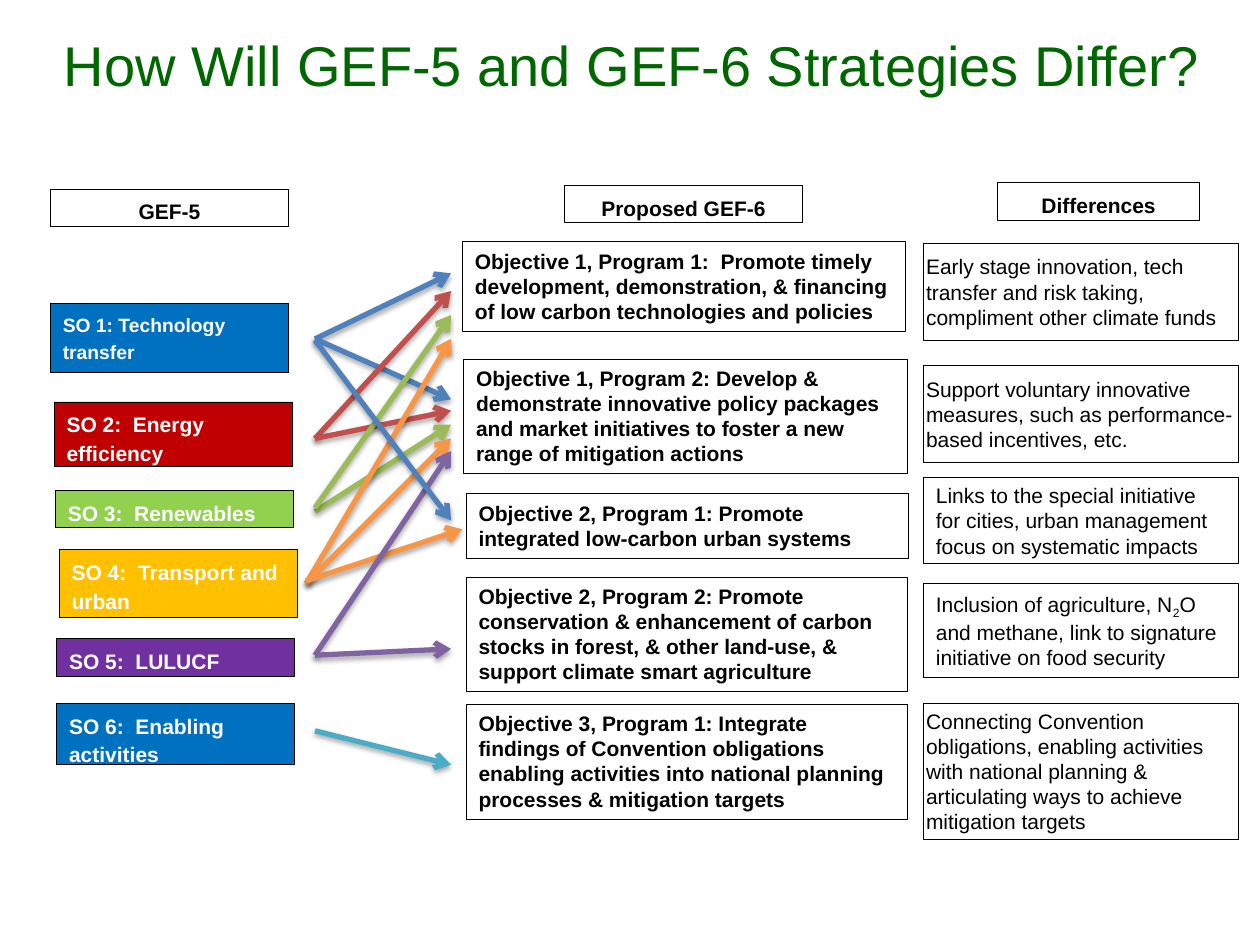
from lxml.etree import SubElement as Sub
from pptx import Presentation
from pptx.dml.color import RGBColor as RGB
from pptx.enum.shapes import MSO_CONNECTOR as Conn, MSO_SHAPE as Kind
from pptx.enum.text import MSO_ANCHOR as Anchor, MSO_AUTO_SIZE as Auto, PP_ALIGN as Align
from pptx.oxml.ns import qn
from pptx.util import Inches, Pt


def tint(code):
    return RGB.from_string(code)


def box(x, y, w, h, runs, fill="FFFFFF", ink="000000", size=12, bold=True):
    shape = slide.shapes.add_shape(Kind.RECTANGLE, Inches(x), Inches(y), Inches(w), Inches(h))
    shape.shadow.inherit = False
    shape.fill.solid()
    shape.fill.fore_color.rgb = tint(fill)
    shape.line.color.rgb = tint("000000")
    shape.line.width = Pt(0.5)
    frame = shape.text_frame
    frame.word_wrap = True
    frame.vertical_anchor = Anchor.TOP
    para = frame.paragraphs[0]
    para.alignment = Align.LEFT
    for text in runs:
        run = para.add_run()
        run.text = text
        run.font.name = "Arial"
        run.font.size = Pt(size)
        run.font.bold = bold
        run.font.color.rgb = tint(ink)
    return frame


deck = Presentation()
deck.slide_width = Inches(10)
deck.slide_height = Inches(7.5)
slide = deck.slides.add_slide(deck.slide_layouts[5])

title = slide.shapes.title
title.left, title.top = Inches(0.08), Inches(0.02)
title.width, title.height = Inches(9.75), Inches(0.98)
title.text_frame.vertical_anchor = Anchor.MIDDLE
para = title.text_frame.paragraphs[0]
para.alignment = Align.CENTER
run = para.add_run()
run.text = " How Will GEF-5 and GEF-6 Strategies Differ?"
run.font.name = "Arial"
run.font.size = Pt(32)
run.font.color.rgb = tint("006600")

heads = [
    (0.4, 1.5, 1.89, "GEF-5"),
    (4.48, 1.47, 1.89, "Proposed GEF-6"),
    (7.92, 1.45, 1.6, "Differences"),
]
for x, y, w, text in heads:
    para = box(x, y, w, 0.3, [text]).paragraphs[0]
    para.alignment = Align.CENTER
    para.line_spacing = 1.15
    para.space_after = Pt(10)

goals = [
    (0.4, 2.41, 0.55, "0070C0", 11, "SO 1: Technology transfer"),
    (0.43, 3.19, 0.51, "C00000", 12, "SO 2:  Energy efficiency"),
    (0.44, 3.89, 0.3, "92D050", 12, "SO 3:  Renewables"),
    (0.47, 4.36, 0.54, "FFC000", 12, "SO 4:  Transport and urban"),
    (0.45, 5.07, 0.3, "7030A0", 12, "SO 5:  LULUCF"),
    (0.45, 5.58, 0.49, "0070C0", 12, "SO 6:  Enabling activities"),
]
for x, y, h, fill, size, text in goals:
    para = box(x, y, 1.89, h, [text], fill, "FFFFFF", size).paragraphs[0]
    para.line_spacing = 1.15
    para.space_after = Pt(10)

plans = [
    (3.67, 1.92, 3.52, 0.71, "Objective 1, Program 1:  Promote timely development, "
     "demonstration, & financing of low carbon technologies and policies"),
    (3.68, 2.85, 3.52, 0.91, "Objective 1, Program 2: Develop & demonstrate innovative policy "
     "packages and market initiatives to foster a new range of mitigation actions"),
    (3.7, 3.92, 3.51, 0.51, "Objective 2, Program 1: Promote integrated low-carbon urban systems"),
    (3.7, 4.58, 3.5, 0.91, "Objective 2, Program 2: Promote conservation & enhancement of carbon "
     "stocks in forest, & other land-use, & support climate smart agriculture"),
    (3.7, 5.59, 3.5, 0.91, "Objective 3, Program 1: Integrate findings of Convention obligations "
     "enabling activities into national planning processes & mitigation targets"),
]
for x, y, w, h, text in plans:
    box(x, y, w, h, [text]).auto_size = Auto.SHAPE_TO_FIT_TEXT

notes = [
    (1.93, 0.77, True, ["Early stage innovation, tech transfer and risk taking, "
                        "compliment other climate funds"]),
    (2.9, 0.77, True, ["Support voluntary innovative measures, such as "
                       "performance-based incentives, etc."]),
    (3.79, 0.68, False, ["Links to the special initiative for cities, urban management "
                         "focus on systematic impacts"]),
    (4.63, 0.75, False, ["Inclusion of agriculture, N", "2",
                         "O and methane, link to signature initiative on food security"]),
    (5.58, 1.08, True, ["Connecting Convention obligations, enabling activities with national "
                        "planning & articulating ways to achieve mitigation targets"]),
]
for y, h, tight, runs in notes:
    frame = box(7.33, y, 2.5, h, runs, bold=False)
    frame.vertical_anchor = Anchor.MIDDLE
    if tight:
        frame.margin_left = frame.margin_right = Inches(0.02)
        frame.margin_top = frame.margin_bottom = Inches(0.02)
    for run in frame.paragraphs[0].runs:
        if run.text == "2":
            run.font._element.set("baseline", "-25000")

blue, red, green = "4F81BD", "C0504D", "9BBB59"
gold, plum, teal = "F79646", "8064A2", "4BACC6"
links = [
    (blue, 2.5, 2.69, 3.58, 2.17),
    (blue, 2.5, 2.69, 3.58, 3.17),
    (red, 2.5, 3.48, 3.58, 2.31),
    (red, 2.5, 3.48, 3.58, 3.26),
    (green, 2.5, 4.06, 3.58, 3.37),
    (green, 2.5, 4.03, 3.58, 2.5),
    (gold, 2.43, 4.63, 3.58, 2.69),
    (gold, 2.43, 4.63, 3.58, 3.48),
    (gold, 2.43, 4.61, 3.67, 4.2),
    (plum, 2.5, 5.2, 3.58, 3.58),
    (plum, 2.5, 5.2, 3.58, 5.15),
    (teal, 2.5, 5.8, 3.58, 6.07),
    (blue, 2.5, 2.7, 3.58, 4.13),
]
for hue, *ends in links:
    link = slide.shapes.add_connector(Conn.STRAIGHT, *[Inches(v) for v in ends])
    link.line.color.rgb = tint(hue)
    link.line.width = Pt(3)
    Sub(link.line._get_or_add_ln(), qn("a:tailEnd"), type="arrow")
    glow = Sub(link._element.spPr, qn("a:effectLst"))
    shade = Sub(glow, qn("a:outerShdw"), blurRad=str(Pt(3.1)), dist=str(Pt(1.8)),
                dir="5400000", rotWithShape="0")
    dark = Sub(shade, qn("a:srgbClr"), val="000000")
    Sub(dark, qn("a:alpha"), val="35000")

deck.save("out.pptx")
